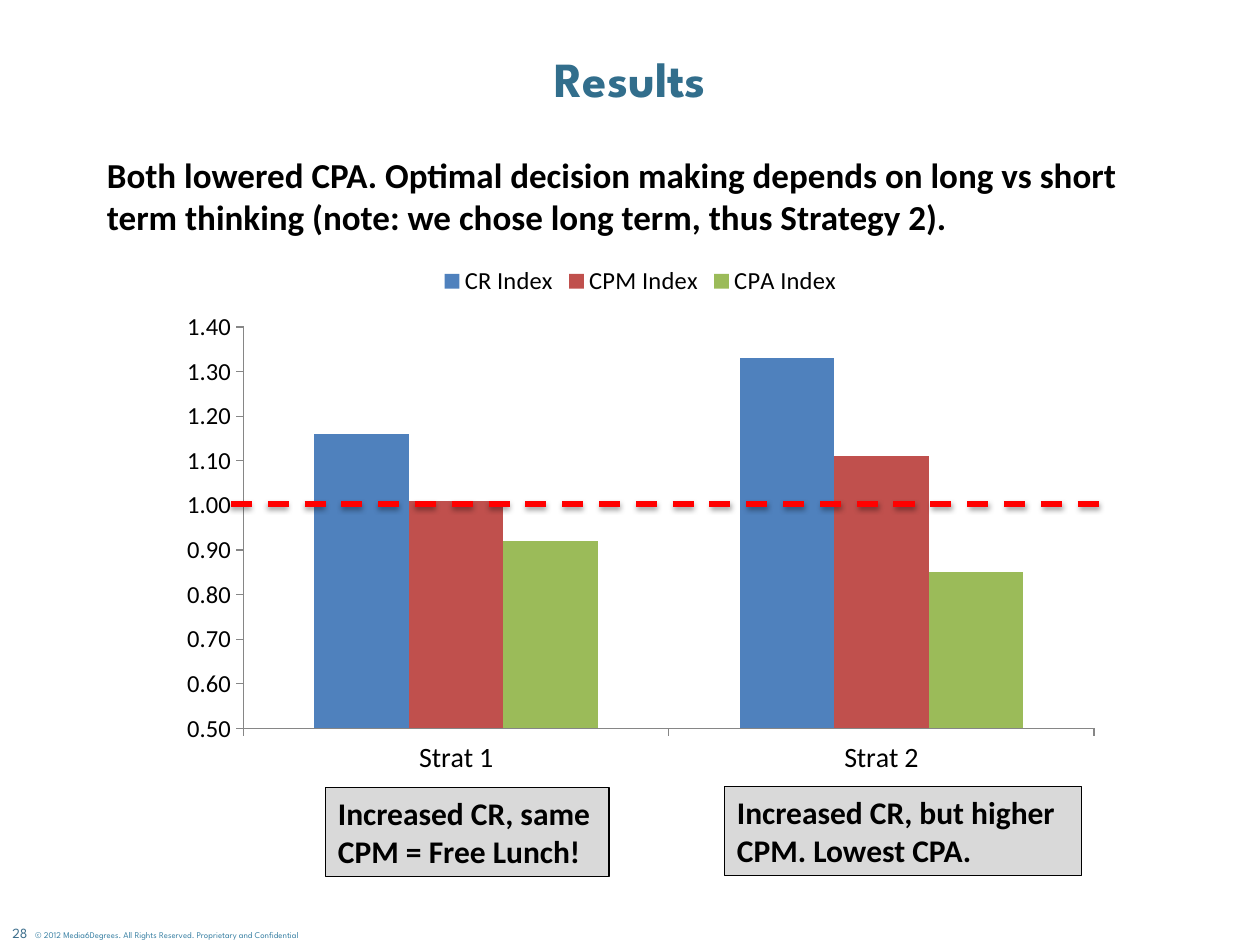
from dataclasses import dataclass

import pptx
import pptx.chart.data
import pptx.dml.color
import pptx.enum.chart
import pptx.enum.dml
import pptx.enum.shapes
import pptx.enum.text
import pptx.oxml
import pptx.oxml.ns
import pptx.util
from pptx.util import Pt

RGB = pptx.dml.color.RGBColor.from_string
ANCHOR = pptx.enum.text.MSO_ANCHOR
CENTER = pptx.enum.text.PP_ALIGN.CENTER


@dataclass(frozen=True)
class Theme:
    head: str = "League Spartan"
    body: str = "Calibri"
    ink: str = "000000"
    title: str = "326E8C"
    number: str = "3C6E8C"
    legal: str = "3A81A4"
    panel: str = "D9D9D9"
    axis: str = "868686"
    target: str = "FF0000"
    series: tuple = ("4F81BD", "C0504D", "9BBB59")
    title_size: float = 28
    lead_size: float = 20
    note_size: float = 18
    category_size: float = 16
    chart_size: float = 14
    number_size: float = 8
    legal_size: float = 5


T = Theme()


def set_all(obj, values):
    for name, value in values.items():
        setattr(obj, name, value)


def format_font(font, size, color=T.ink, name=T.body, bold=False):
    set_all(font, dict(size=Pt(size), name=name, bold=bold))
    font.color.rgb = RGB(color)


def place(sp, box):
    set_all(sp, dict(zip(("left", "top", "width", "height"), map(Pt, box))))


def write(sp, text, wrap=True, anchor=ANCHOR.TOP, align=None, **font):
    tf = sp.text_frame
    set_all(tf, dict(text=text, word_wrap=wrap, vertical_anchor=anchor))
    p = tf.paragraphs[0]
    p.alignment = align
    format_font(p.runs[0].font, **font)
    return tf


def add_title(s, box, text):
    sp = s.shapes.title
    place(sp, box)
    tf = write(sp, text, anchor=ANCHOR.MIDDLE, align=CENTER,
               size=T.title_size, color=T.title, name=T.head, bold=True)
    tf.paragraphs[0].line_spacing = Pt(33.2)


def add_lead(s, box, text):
    sp = s.shapes.add_textbox(*map(Pt, box))
    write(sp, text, size=T.lead_size, bold=True)


def add_target_line(s, x, y, width):
    line = s.shapes.add_connector(
        pptx.enum.shapes.MSO_CONNECTOR.STRAIGHT, Pt(x), Pt(y), Pt(x + width), Pt(y))
    line.line.color.rgb = RGB(T.target)
    set_all(line.line, dict(width=Pt(3), dash_style=pptx.enum.dml.MSO_LINE.DASH))
    line._element.spPr.append(pptx.oxml.parse_xml(
        f'<a:effectLst {pptx.oxml.ns.nsdecls("a")}>'
        f'<a:outerShdw blurRad="{Pt(3.1)}" dist="{Pt(1.6)}" dir="5400000" rotWithShape="0">'
        '<a:srgbClr val="000000"><a:alpha val="38000"/></a:srgbClr>'
        '</a:outerShdw></a:effectLst>'))


def fix_plot_area(chart, x, y, w, h):
    area = chart._chartSpace.chart.plotArea
    for old in area.findall(pptx.oxml.ns.qn("c:layout")):
        area.remove(old)
    parts = "".join(f'<c:{k} val="{v}"/>' for k, v in (
        ("layoutTarget", "inner"), ("xMode", "edge"), ("yMode", "edge"),
        ("x", x), ("y", y), ("w", w), ("h", h)))
    area.insert(0, pptx.oxml.parse_xml(
        f'<c:layout {pptx.oxml.ns.nsdecls("c")}><c:manualLayout>{parts}'
        '</c:manualLayout></c:layout>'))


def add_index_chart(s, box, categories, series):
    data = pptx.chart.data.CategoryChartData(number_format="0.00")
    data.categories = categories
    for name, values in series:
        data.add_series(name, values)
    enum = pptx.enum.chart
    chart = s.shapes.add_chart(
        enum.XL_CHART_TYPE.COLUMN_CLUSTERED, *map(Pt, box), data).chart
    format_font(chart.font, T.chart_size)
    set_all(chart, dict(has_title=False, has_legend=True))
    set_all(chart.legend, dict(position=enum.XL_LEGEND_POSITION.TOP,
                               include_in_layout=False))
    plot = chart.plots[0]
    set_all(plot, dict(gap_width=150, overlap=0, vary_by_categories=False))
    for ser, color in zip(plot.series, T.series):
        ser.format.fill.solid()
        ser.format.fill.fore_color.rgb = RGB(color)
        ser.invert_if_negative = False
    for axis, size in ((chart.category_axis, T.category_size),
                       (chart.value_axis, T.chart_size)):
        set_all(axis, dict(has_major_gridlines=False,
                           major_tick_mark=enum.XL_TICK_MARK.OUTSIDE,
                           minor_tick_mark=enum.XL_TICK_MARK.NONE))
        format_font(axis.tick_labels.font, size)
        axis.format.line.color.rgb = RGB(T.axis)
        axis.format.line.width = Pt(0.75)
    set_all(chart.value_axis, dict(minimum_scale=0.5, maximum_scale=1.4, major_unit=0.1))
    set_all(chart.value_axis.tick_labels,
            dict(number_format="0.00", number_format_is_linked=False))
    fix_plot_area(chart, 0.08, 0.14, 0.9, 0.75)
    x, y, width, _ = box
    add_target_line(s, x + 36, y + 144, width - 36)


def add_note(s, box, text):
    sp = s.shapes.add_shape(pptx.enum.shapes.MSO_SHAPE.RECTANGLE, *map(Pt, box))
    sp.shadow.inherit = False
    sp.fill.solid()
    sp.fill.fore_color.rgb = RGB(T.panel)
    sp.line.color.rgb = RGB(T.ink)
    sp.line.width = Pt(0.75)
    write(sp, text, align=pptx.enum.text.PP_ALIGN.LEFT, size=T.note_size, bold=True)


def add_footer(s, box, number, legal):
    x, y, width, height = box
    sp = s.shapes.add_textbox(Pt(x + 13), Pt(y), Pt(width - 13), Pt(height))
    write(sp, legal, wrap=False, size=T.legal_size, color=T.legal, name=T.head)
    sp = s.shapes.add_textbox(Pt(x), Pt(y + 0.5), Pt(168), Pt(9.5))
    tf = write(sp, number, anchor=ANCHOR.MIDDLE,
               size=T.number_size, color=T.number, name=T.head)
    set_all(tf, dict(margin_top=0, margin_bottom=0))


def main():
    prs = pptx.Presentation()
    set_all(prs, dict(slide_width=Pt(720), slide_height=Pt(540)))
    s = prs.slides.add_slide(prs.slide_layouts.get_by_name("Title Only"))
    add_title(s, (36, 24.5, 648, 41), "Results")
    add_lead(s, (54, 84, 600, 55.5),
             "Both lowered CPA. Optimal decision making depends on long vs short "
             "term thinking (note: we chose long term, thus Strategy 2).")
    add_index_chart(s, (96, 144, 540, 306), ("Strat 1", "Strat 2"), (
        ("CR Index", (1.16, 1.33)),
        ("CPM Index", (1.01, 1.11)),
        ("CPA Index", (0.92, 0.85))))
    add_note(s, (186, 450, 162, 51), "Increased CR, same CPM = Free Lunch!")
    add_note(s, (414, 449.5, 204, 51), "Increased CR, but higher CPM. Lowest CPA.")
    add_footer(s, (0, 528, 204.5, 13.5), "28",
               "© 2012 Media6Degrees. All Rights Reserved. Proprietary and Confidential")
    prs.save("out.pptx")


if __name__ == "__main__":
    main()
